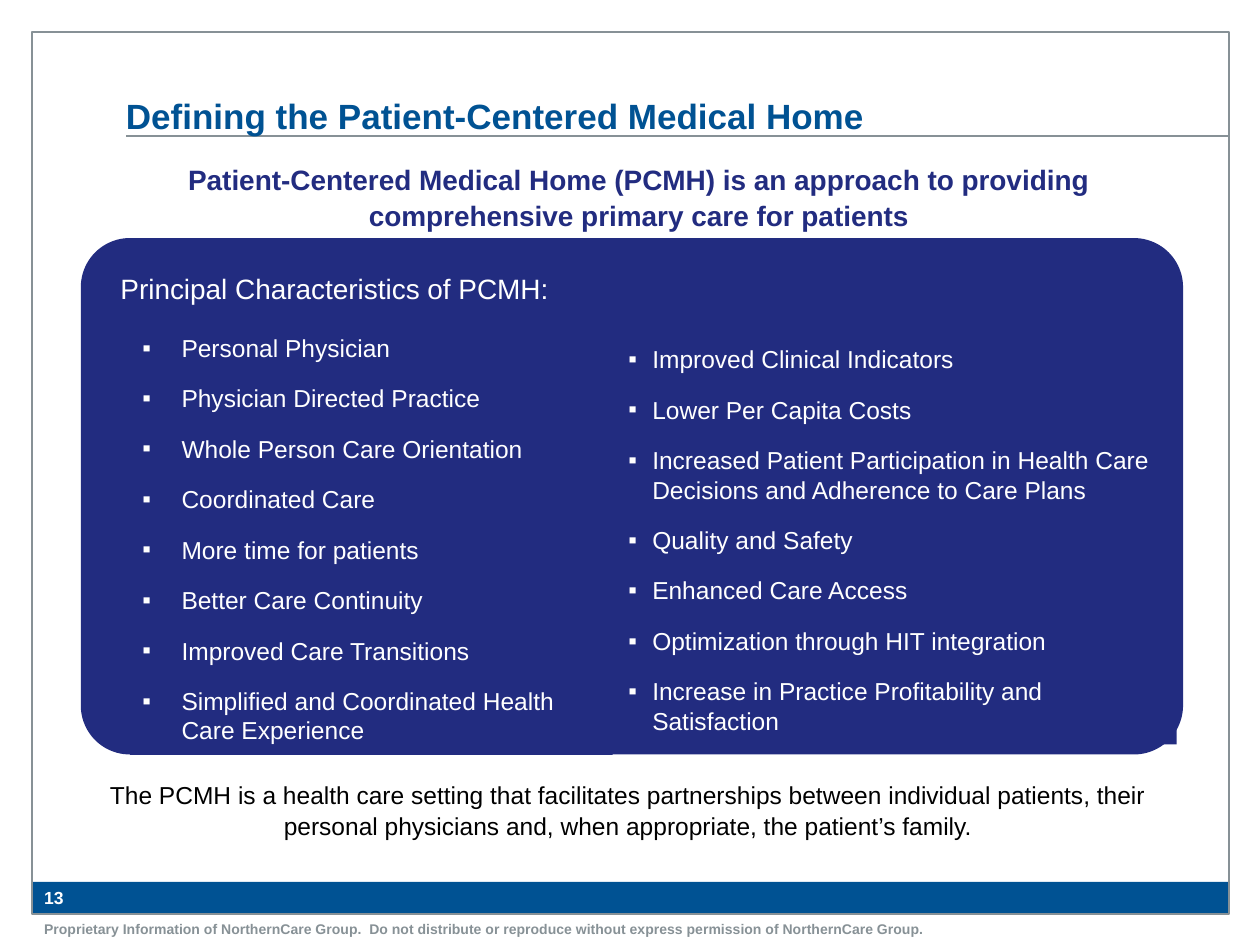
from lxml import etree
from pptx import Presentation
from pptx.dml.color import RGBColor
from pptx.enum.shapes import MSO_CONNECTOR, MSO_SHAPE
from pptx.enum.text import MSO_ANCHOR, PP_ALIGN
from pptx.oxml.ns import qn
from pptx.util import Cm, Pt

RECT, ROUND = MSO_SHAPE.RECTANGLE, MSO_SHAPE.ROUNDED_RECTANGLE
LEFT, CENTER = PP_ALIGN.LEFT, PP_ALIGN.CENTER
TOP, MIDDLE, BOTTOM = MSO_ANCHOR.TOP, MSO_ANCHOR.MIDDLE, MSO_ANCHOR.BOTTOM
FONT = "Arial"
BLUE, NAVY, GRAY, WHITE, BLACK = "005293", "222C80", "879196", "FFFFFF", "000000"
PAD = (0.25, 0.13, 0.25, 0.13)
NONE = (0, 0, 0, 0)

TITLE = "Defining the Patient-Centered Medical Home"
INTRO = ("Patient-Centered Medical Home (PCMH) is an approach to providing "
         "comprehensive primary care for patients")
HEAD = "Principal Characteristics of PCMH:"
CLOSE = ("The PCMH is a health care setting that facilitates partnerships between "
         "individual patients, their personal physicians and, when appropriate, "
         "the patient’s family.")
PAGE = "13"
NOTICE = ("Proprietary Information of NorthernCare Group.  Do not distribute or "
          "reproduce without express permission of NorthernCare Group.")
LISTS = [
    ((2.62, 6.58, 9.73, 8.64), 0.79, [
        "Personal Physician",
        "Physician Directed Practice",
        "Whole Person Care Orientation",
        "Coordinated Care",
        "More time for patients",
        "Better Care Continuity",
        "Improved Care Transitions",
        "Simplified and Coordinated Health Care Experience",
    ]),
    ((12.42, 6.81, 11.3, 8.2), 0.48, [
        "Improved Clinical Indicators",
        "Lower Per Capita Costs",
        "Increased Patient Participation in Health Care Decisions and Adherence to Care Plans",
        "Quality and Safety",
        "Enhanced Care Access",
        "Optimization through HIT integration",
        "Increase in Practice Profitability and Satisfaction",
    ]),
]
LABELS = [
    (PAGE, (0.64, 17.78, 1.7, 0.64), 10, WHITE, True, LEFT, MIDDLE, (0.25, 0, 0, 0), 1.0),
    (NOTICE, (0.64, 18.42, 24.13, 0.64), 8, GRAY, True, LEFT, TOP, PAD, 1.0),
    (TITLE, (2.54, 0.64, 15.42, 2.11), 20, BLUE, True, LEFT, BOTTOM, NONE, 1.0),
    (INTRO, (1.78, 3.25, 22.2, 1.55), 16, NAVY, True, CENTER, TOP, NONE, 1.05),
    (CLOSE, (1.35, 15.7, 22.63, 1.55), 14, BLACK, False, CENTER, TOP, NONE, 1.05),
]


def color(code):
    return RGBColor.from_string(code)


def place(box):
    return [Cm(v) for v in box]


def add_block(slide, kind, box, fill=None, line=None):
    shape = slide.shapes.add_shape(kind, *place(box))
    shape.shadow.inherit = False
    if fill:
        shape.fill.solid()
        shape.fill.fore_color.rgb = color(fill)
    else:
        shape.fill.background()
    if line:
        shape.line.color.rgb = color(line)
        shape.line.width = Pt(1)
    else:
        shape.line.fill.background()
    return shape


def set_frame(shape, pad, anchor=TOP):
    frame = shape.text_frame
    frame.word_wrap = True
    frame.vertical_anchor = anchor
    (frame.margin_left, frame.margin_top,
     frame.margin_right, frame.margin_bottom) = place(pad)
    return frame


def write(para, text, size, tone, bold=False, align=LEFT, space=1.0):
    para.alignment = align
    para.line_spacing = space
    run = para.add_run()
    run.text = text
    run.font.name = FONT
    run.font.size = Pt(size)
    run.font.bold = bold
    run.font.color.rgb = color(tone)


def add_bullet(para, indent):
    props = para._p.get_or_add_pPr()
    props.set("marL", str(Cm(indent)))
    props.set("indent", str(-Cm(indent)))
    tint = etree.SubElement(props, qn("a:buClr"))
    etree.SubElement(tint, qn("a:srgbClr"), val=WHITE)
    etree.SubElement(props, qn("a:buFont"), typeface=FONT)
    etree.SubElement(props, qn("a:buChar"), char="▪")


def add_list(slide, box, indent, items):
    frame = set_frame(add_block(slide, RECT, box, NAVY), PAD)
    for i, item in enumerate(items):
        para = frame.add_paragraph() if i else frame.paragraphs[0]
        add_bullet(para, indent)
        para.space_before = Pt(6 if i else 0)
        para.space_after = Pt(6)
        write(para, item, 14, WHITE)


def add_label(slide, text, box, size, tone, bold, align, anchor, pad, space):
    frame = set_frame(slide.shapes.add_textbox(*place(box)), pad, anchor)
    write(frame.paragraphs[0], text, size, tone, bold, align, space)


def main():
    deck = Presentation()
    deck.slide_width, deck.slide_height = Cm(25.4), Cm(19.05)
    slide = deck.slides.add_slide(deck.slide_layouts[6])

    add_block(slide, RECT, (0.64, 17.78, 24.13, 0.64), BLUE)
    add_block(slide, RECT, (0.64, 0.64, 24.13, 17.78), line=GRAY)
    rule = slide.shapes.add_connector(
        MSO_CONNECTOR.STRAIGHT, *place((24.77, 2.74, 2.54, 2.74)))
    rule.line.color.rgb = color(GRAY)
    rule.line.width = Pt(0.75)
    etree.SubElement(rule._element.spPr, qn("a:effectLst"))

    panel = add_block(slide, ROUND, (1.63, 4.8, 22.22, 10.41), NAVY)
    panel.adjustments[0] = 0.095
    frame = set_frame(panel, (0.51, 0.51, 0.51, 0.51))
    write(frame.paragraphs[0], HEAD, 16, WHITE, space=0.8)

    for box, indent, items in LISTS:
        add_list(slide, box, indent, items)
    for label in LABELS:
        add_label(slide, *label)

    deck.save("out.pptx")


if __name__ == "__main__":
    main()
